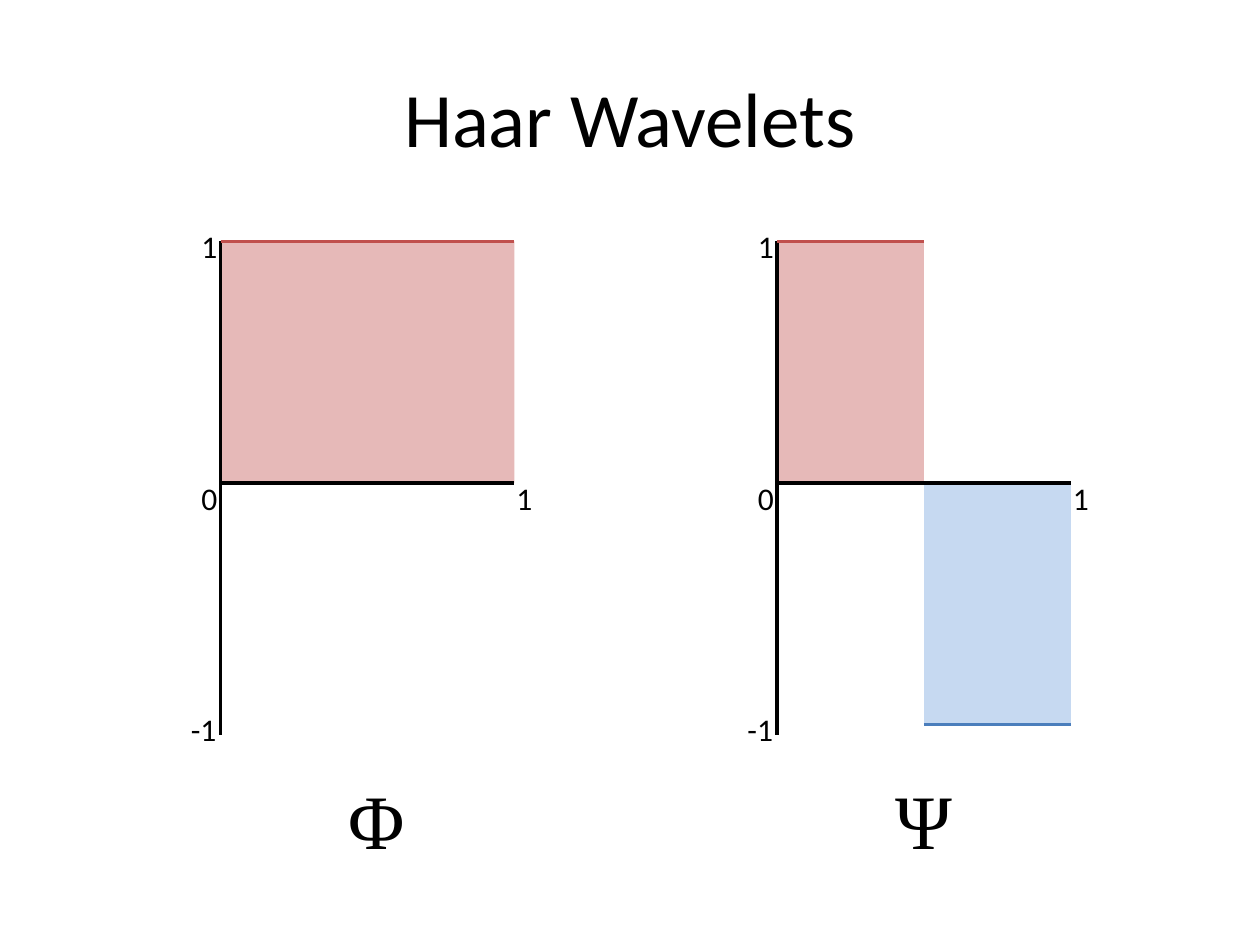
from dataclasses import dataclass

from lxml import etree
from pptx import Presentation
from pptx.dml import color
from pptx.enum import shapes, text
from pptx.oxml import ns
from pptx.util import Pt


@dataclass(frozen=True)
class Theme:
    ink: str = "000000"
    positive_fill: str = "E6B9B8"
    positive_line: str = "C0504D"
    negative_fill: str = "C6D9F1"
    negative_line: str = "4B7EBC"
    body_font: str = "Calibri"
    symbol_font: str = "Times New Roman"
    large: int = 44
    small: int = 18
    line: int = 2


THEME = Theme()


def rgb(value):
    return color.RGBColor.from_string(value)


def add_text(parent, content, left, top, width, height, size=THEME.small,
             font=THEME.body_font, align=text.PP_ALIGN.LEFT,
             anchor=text.MSO_ANCHOR.TOP, wrap=False):
    shape = parent.add_textbox(Pt(left), Pt(top), Pt(width), Pt(height))
    frame = shape.text_frame
    frame.word_wrap = wrap
    frame.vertical_anchor = anchor
    paragraph = frame.paragraphs[0]
    paragraph.alignment = align
    run = paragraph.add_run()
    run.text = content
    run.font.size = Pt(size)
    run.font.name = font
    run.font.color.rgb = rgb(THEME.ink)


def add_line(parent, start, end, line_color=THEME.ink):
    line = parent.add_connector(shapes.MSO_CONNECTOR.STRAIGHT,
                                *map(Pt, start + end))
    line.line.color.rgb = rgb(line_color)
    line.line.width = Pt(THEME.line)
    etree.SubElement(line._element.spPr, ns.qn("a:effectLst"))


def add_area(parent, left, top, width, height, fill):
    shape = parent.add_shape(shapes.MSO_SHAPE.RECTANGLE,
                             *map(Pt, (left, top, width, height)))
    shape.shadow.inherit = False
    shape.fill.solid()
    shape.fill.fore_color.rgb = rgb(fill)
    shape.line.fill.background()


def add_title(slide, left, top, width, height):
    add_text(slide.shapes, "Haar Wavelets", left, top, width, height,
             size=THEME.large, align=text.PP_ALIGN.CENTER,
             anchor=text.MSO_ANCHOR.MIDDLE, wrap=True)


def add_wavelet(slide, left, top, width, height, steps):
    group = slide.shapes.add_group_shape().shapes
    unit = height / 2
    zero = top + unit
    step_width = width / len(steps)
    levels = []
    for index, value in enumerate(steps):
        start = left + index * step_width
        level = zero - value * unit
        fill, edge = ((THEME.positive_fill, THEME.positive_line) if value > 0
                      else (THEME.negative_fill, THEME.negative_line))
        add_area(group, start, min(zero, level), step_width, unit, fill)
        levels.append(((start, level), (start + step_width, level), edge))

    add_line(group, (left, zero), (left + width, zero))
    add_line(group, (left, top), (left, top + height + 6))
    labels = (("0", -18, unit - 6, 24), ("1", width - 6, unit - 6, 24),
              ("-1", -24, height - 12, 30), ("1", -18, -12, 24))
    for content, x, y, label_width in labels:
        add_text(group, content, left + x, top + y, label_width, 29)
    for start, end, edge in levels:
        add_line(group, start, end, edge)


def add_symbol(slide, content, left, top, width, height):
    add_text(slide.shapes, content, left, top, width, height,
             size=THEME.large, font=THEME.symbol_font)


def main():
    presentation = Presentation()
    presentation.slide_width = Pt(720)
    presentation.slide_height = Pt(540)
    slide = presentation.slides.add_slide(presentation.slide_layouts[6])
    add_title(slide, 36, 21.6, 648, 90)
    wavelets = ((126, (1,), "Φ", 192), (444, (1, -1), "Ψ", 504.6))
    for left, steps, symbol, symbol_left in wavelets:
        add_wavelet(slide, left, 138, 168, 276, steps)
        add_symbol(slide, symbol, symbol_left, 438, 47, 60.5)
    presentation.save("out.pptx")


if __name__ == "__main__":
    main()
